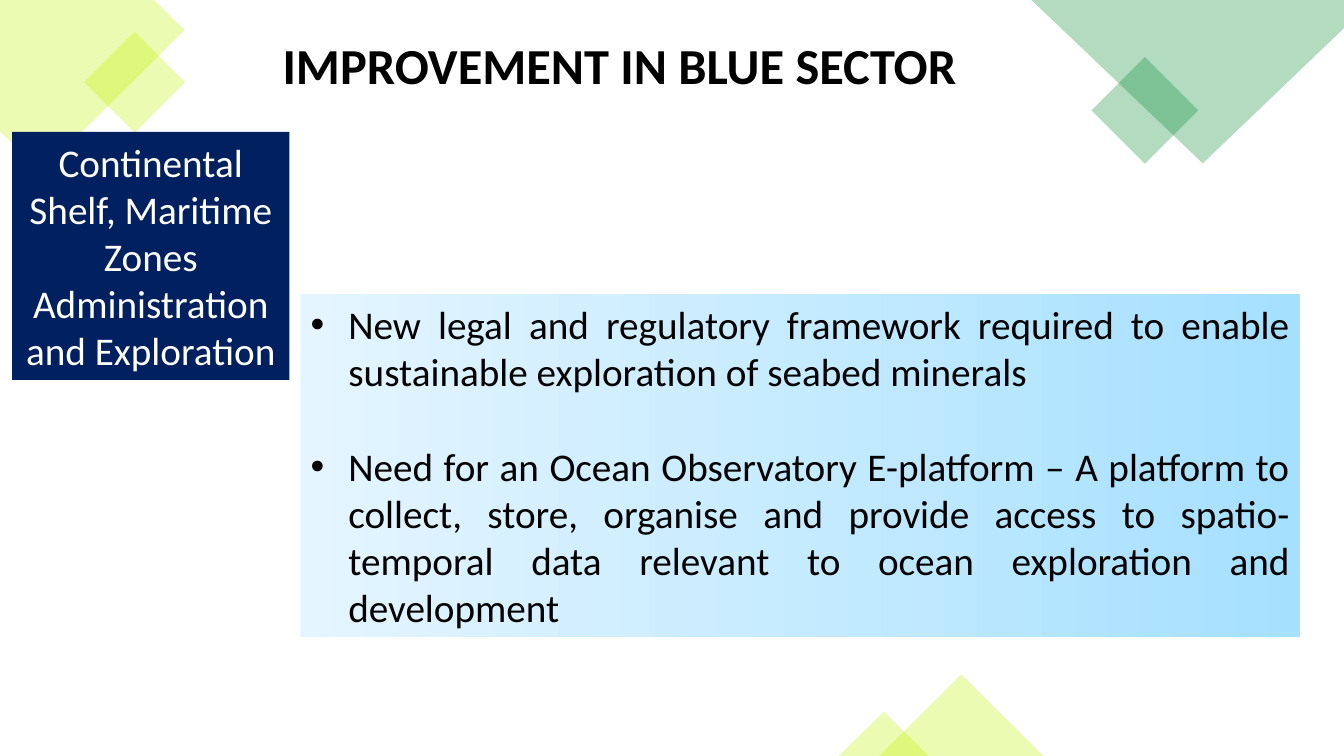
from typing import NamedTuple

from lxml import etree
from pptx import Presentation
from pptx.dml.color import RGBColor
from pptx.enum.shapes import MSO_SHAPE as Preset
from pptx.enum.text import MSO_ANCHOR as Anchor, MSO_AUTO_SIZE as AutoSize, PP_ALIGN as Align
from pptx.oxml.ns import qn
from pptx.util import Inches, Pt

LIME = RGBColor(0xC0, 0xF4, 0x00)
GREEN = RGBColor(0x03, 0x8B, 0x30)
NAVY = RGBColor(0x00, 0x20, 0x60)
PALE_BLUE = RGBColor(0xE4, 0xF5, 0xFF)
SKY_BLUE = RGBColor(0xA6, 0xE0, 0xFF)
BLACK = RGBColor(0x00, 0x00, 0x00)
WHITE = RGBColor(0xFF, 0xFF, 0xFF)

TITLE = "IMPROVEMENT IN BLUE SECTOR"
TOPIC = "Continental Shelf, Maritime Zones Administration and Exploration"
POINTS = [
    "New legal and regulatory framework required to enable sustainable exploration of seabed minerals",
    "Need for an Ocean Observatory E-platform – A platform to collect, store, organise and provide "
    "access to spatio-temporal data relevant to ocean exploration and development",
]


class Box(NamedTuple):
    """A rectangle on the page, in inches."""
    left: float
    top: float
    width: float
    height: float

    def place(self):
        """Return the four lengths for python-pptx."""
        return [Inches(value) for value in self]


def tint(shape, color):
    """Give a decorative shape a 30 % opaque fill and no outline."""
    shape.shadow.inherit = False
    shape.line.fill.background()
    shape.fill.solid()
    shape.fill.fore_color.rgb = color
    fill_color = shape.element.spPr.find(qn("a:solidFill")).find(qn("a:srgbClr"))
    etree.SubElement(fill_color, qn("a:alpha"), val="30000")


def add_outline(page, box, corners, color):
    """Draw a tinted polygon whose corners are measured from the box."""
    points = [(Inches(box.left + x), Inches(box.top + y)) for x, y in corners]
    builder = page.shapes.build_freeform(*points[0], scale=1.0)
    builder.add_line_segments(points[1:], close=True)
    tint(builder.convert_to_shape(), color)


def add_preset(page, preset, box, color, rotation=0):
    """Draw a tinted preset shape that fills the box."""
    shape = page.shapes.add_shape(preset, *box.place())
    shape.rotation = rotation
    tint(shape, color)


def add_left_corner(page, box):
    """Draw the lime squares of the top left corner."""
    corners = [(1.53, 0), (0, 0), (0, 1.3), (0.41, 1.71), (1.83, 0.3)]
    add_outline(page, box, corners, LIME)
    square = Box(box.left + 0.98, box.top + 0.46, 0.71, 0.71)
    add_preset(page, Preset.RECTANGLE, square, LIME, 315)


def add_right_corner(page, box):
    """Draw the green squares of the top right corner."""
    square = Box(box.left + 0.75, box.top + 0.72, 0.75, 0.75)
    add_preset(page, Preset.RECTANGLE, square, GREEN, 315)
    corners = [(box.width, 0), (0, 0), (1.7, box.height), (box.width, 0.28)]
    add_outline(page, box, corners, GREEN)


def add_bottom_peaks(page, box):
    """Draw the two lime triangles standing on the bottom edge."""
    bottom = box.top + box.height
    for offset, width, height in [(0.4, 1.63, 0.81), (0, 0.89, 0.44)]:
        peak = Box(box.left + offset, bottom - height, width, height)
        add_preset(page, Preset.ISOSCELES_TRIANGLE, peak, LIME)


def write(shape, box, texts, size, color, align, bold=False):
    """Place a shape in the box and fill it with formatted paragraphs."""
    shape.left, shape.top, shape.width, shape.height = box.place()
    frame = shape.text_frame
    frame.text = "\n".join(texts)
    frame.word_wrap = True
    frame.auto_size = AutoSize.NONE
    frame.vertical_anchor = Anchor.MIDDLE
    for para in frame.paragraphs:
        para.alignment = align
        para.space_before = Pt(0)
        for span in para.runs:
            span.font.name = "Calibri"
            span.font.size = Pt(size)
            span.font.bold = bold
            span.font.color.rgb = color


def fill_title(page, box):
    """Write the heading in the title placeholder."""
    write(page.shapes.title, box, [TITLE], 36, BLACK, Align.CENTER, bold=True)


def fill_points(page, box):
    """Write the bullets in the body placeholder over a blue gradient."""
    body = page.placeholders[1]
    write(body, box, POINTS, 28, BLACK, Align.JUSTIFY)
    for para in body.text_frame.paragraphs[1:]:
        para.space_before = Pt(34)
    body.fill.gradient()
    body.fill.gradient_angle = 0
    for stop, color in zip(body.fill.gradient_stops, [PALE_BLUE, SKY_BLUE]):
        stop.color.rgb = color
    first, last = body.fill.gradient_stops
    first.position, last.position = 0, 1


def add_topic(page, box):
    """Draw the navy box that names the topic."""
    topic = page.shapes.add_shape(Preset.RECTANGLE, *box.place())
    topic.shadow.inherit = False
    topic.fill.solid()
    topic.fill.fore_color.rgb = NAVY
    topic.line.fill.background()
    write(topic, box, [TOPIC], 28, WHITE, Align.CENTER)


def main():
    """Build the one-page deck and save it."""
    deck = Presentation()
    deck.slide_width, deck.slide_height = Inches(13.33), Inches(7.5)
    page = deck.slides.add_slide(deck.slide_layouts[1])
    page.background.fill.solid()
    page.background.fill.fore_color.rgb = WHITE
    add_left_corner(page, Box(0, 0, 1.83, 1.71))
    add_right_corner(page, Box(10.23, 0, 3.1, 1.62))
    add_bottom_peaks(page, Box(8.32, 6.69, 2.03, 0.81))
    fill_title(page, Box(2.02, 0.28, 8.25, 0.71))
    fill_points(page, Box(2.98, 2.92, 9.91, 3.4))
    add_topic(page, Box(0.12, 1.31, 2.75, 2.46))
    deck.save("out.pptx")


if __name__ == "__main__":
    main()
